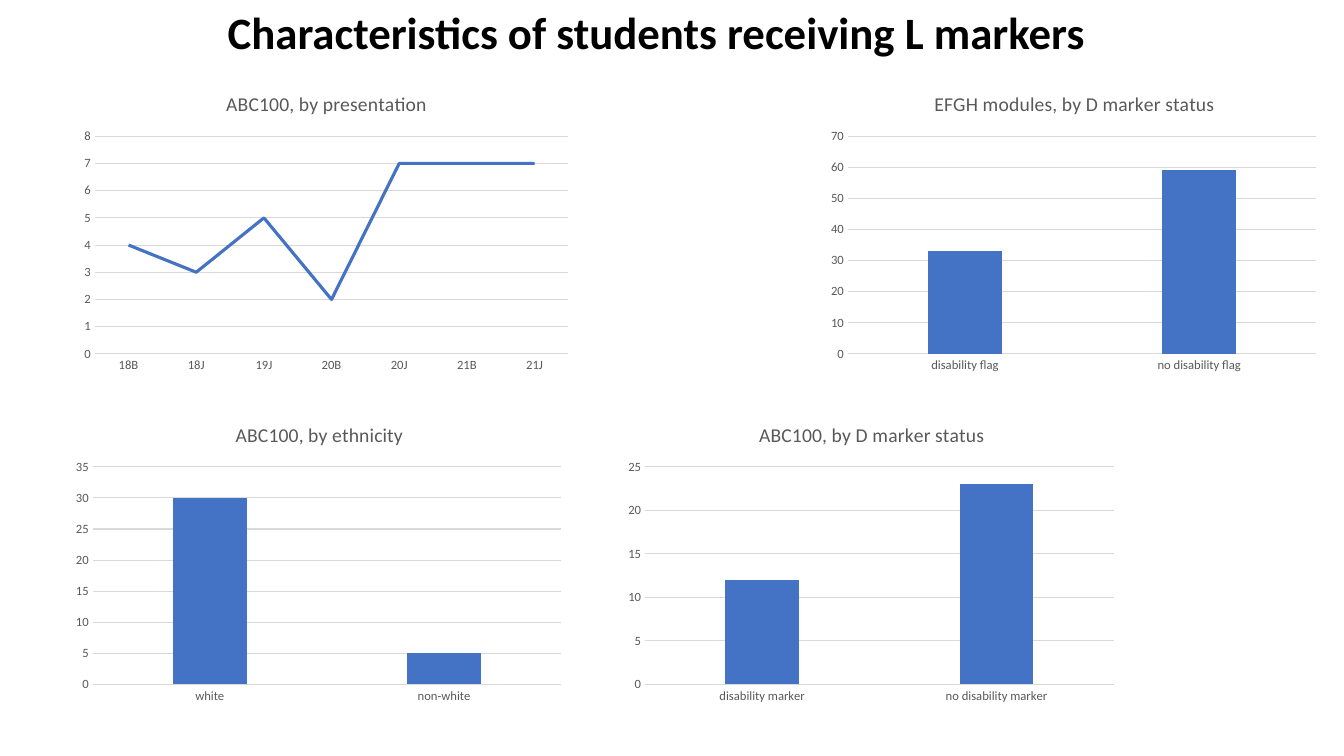
from dataclasses import dataclass

from lxml import etree
from pptx import Presentation
from pptx.chart.data import CategoryChartData
from pptx.dml.color import RGBColor
from pptx.enum.chart import XL_CHART_TYPE, XL_MARKER_STYLE, XL_TICK_MARK
from pptx.enum.text import MSO_AUTO_SIZE
from pptx.oxml import parse_xml
from pptx.oxml.ns import nsdecls
from pptx.util import Cm, Pt

LINE = XL_CHART_TYPE.LINE
COLUMN = XL_CHART_TYPE.COLUMN_CLUSTERED
NO_MARK = XL_MARKER_STYLE.NONE
NO_TICK = XL_TICK_MARK.NONE
GROW = MSO_AUTO_SIZE.SHAPE_TO_FIT_TEXT

FONT = "Calibri"
BLACK, GRAY, GRID, BLUE = "000000", "595959", "D9D9D9", "4472C4"
WIDTH, HEIGHT = 12.7, 7.62
TOP, LOW = 1.91, 10.24


@dataclass
class Panel:
    title: str
    left: float
    top: float
    kind: XL_CHART_TYPE
    cats: list[str]
    vals: list[int]
    peak: int
    step: int


PANELS = [
    Panel("ABC100, by presentation", 1.88, TOP, LINE,
          ["18B", "18J", "19J", "20B", "20J", "21B", "21J"],
          [4, 3, 5, 2, 7, 7, 7], 8, 1),
    Panel("ABC100, by D marker status", 15.62, LOW, COLUMN,
          ["disability marker", "no disability marker"], [12, 23], 25, 5),
    Panel("ABC100, by ethnicity", 1.7, LOW, COLUMN,
          ["white", "non-white"], [30, 5], 35, 5),
    Panel("EFGH modules, by D marker status", 20.73, TOP, COLUMN,
          ["disability flag", "no disability flag"], [33, 59], 70, 10),
]


def color(code: str) -> RGBColor:
    return RGBColor.from_string(code)


def style(font, size: float, code: str, bold: bool = False) -> None:
    font.name, font.size, font.bold = FONT, Pt(size), bold
    font.color.rgb = color(code)


def write(frame, text: str, *, size: float, code: str, bold: bool = False) -> None:
    run = frame.paragraphs[0].add_run()
    run.text = text
    style(run.font, size, code, bold)


def stroke(line, code: str, width: float) -> None:
    line.color.rgb = color(code)
    line.width = Pt(width)


def place(area, **parts: float) -> None:
    """Fix the inner plot area at fractions of the chart's size."""
    root = parse_xml(f"<c:layout {nsdecls('c')}><c:manualLayout/></c:layout>")
    space = root.nsmap["c"]
    items = {"layoutTarget": "inner", "xMode": "edge", "yMode": "edge", **parts}
    for name, value in items.items():
        etree.SubElement(root[0], f"{{{space}}}{name}").set("val", str(value))
    for old in area.findall(root.tag):
        area.remove(old)
    area.insert(0, root)


def draw(slide, panel: Panel) -> None:
    data = CategoryChartData()
    data.categories = panel.cats
    data.add_series("Series 1", panel.vals)
    chart = slide.shapes.add_chart(
        panel.kind, Cm(panel.left), Cm(panel.top), Cm(WIDTH), Cm(HEIGHT), data).chart
    style(chart.font, 10, BLACK)
    chart.has_legend = False
    chart.has_title = True
    write(chart.chart_title.text_frame, panel.title, size=14, code=GRAY)
    chart.chart_title.include_in_layout = False

    cat, val = chart.category_axis, chart.value_axis
    for axis in (cat, val):
        axis.major_tick_mark = axis.minor_tick_mark = NO_TICK
        style(axis.tick_labels.font, 9, GRAY)
    stroke(cat.format.line, GRID, 0.75)
    val.format.line.fill.background()
    val.has_major_gridlines = True
    stroke(val.major_gridlines.format.line, GRID, 0.75)
    val.minimum_scale, val.maximum_scale = 0, panel.peak
    val.major_unit = panel.step

    plot = chart.plots[0]
    plot.vary_by_categories = False
    series = plot.series[0]
    if panel.kind == LINE:
        series.smooth = False
        series.marker.style = NO_MARK
        stroke(series.format.line, BLUE, 2.25)
        left, width = 0.04, 0.94
    else:
        plot.gap_width, plot.overlap = 219, -27
        series.format.fill.solid()
        series.format.fill.fore_color.rgb = color(BLUE)
        left, width = 0.05, 0.93
    place(chart.element.chart.plotArea, x=left, y=0.2, w=width, h=0.72)


def main() -> None:
    deck = Presentation()
    deck.slide_width, deck.slide_height = Cm(33.87), Cm(19.05)
    slide = deck.slides.add_slide(deck.slide_layouts[6])
    for panel in PANELS:
        draw(slide, panel)
    box = slide.shapes.add_textbox(Cm(5.49), Cm(0), Cm(22.89), Cm(1.63))
    box.text_frame.word_wrap = True
    box.text_frame.auto_size = GROW
    write(box.text_frame, "Characteristics of students receiving L markers",
          size=32, code=BLACK, bold=True)
    deck.save("out.pptx")


if __name__ == "__main__":
    main()
